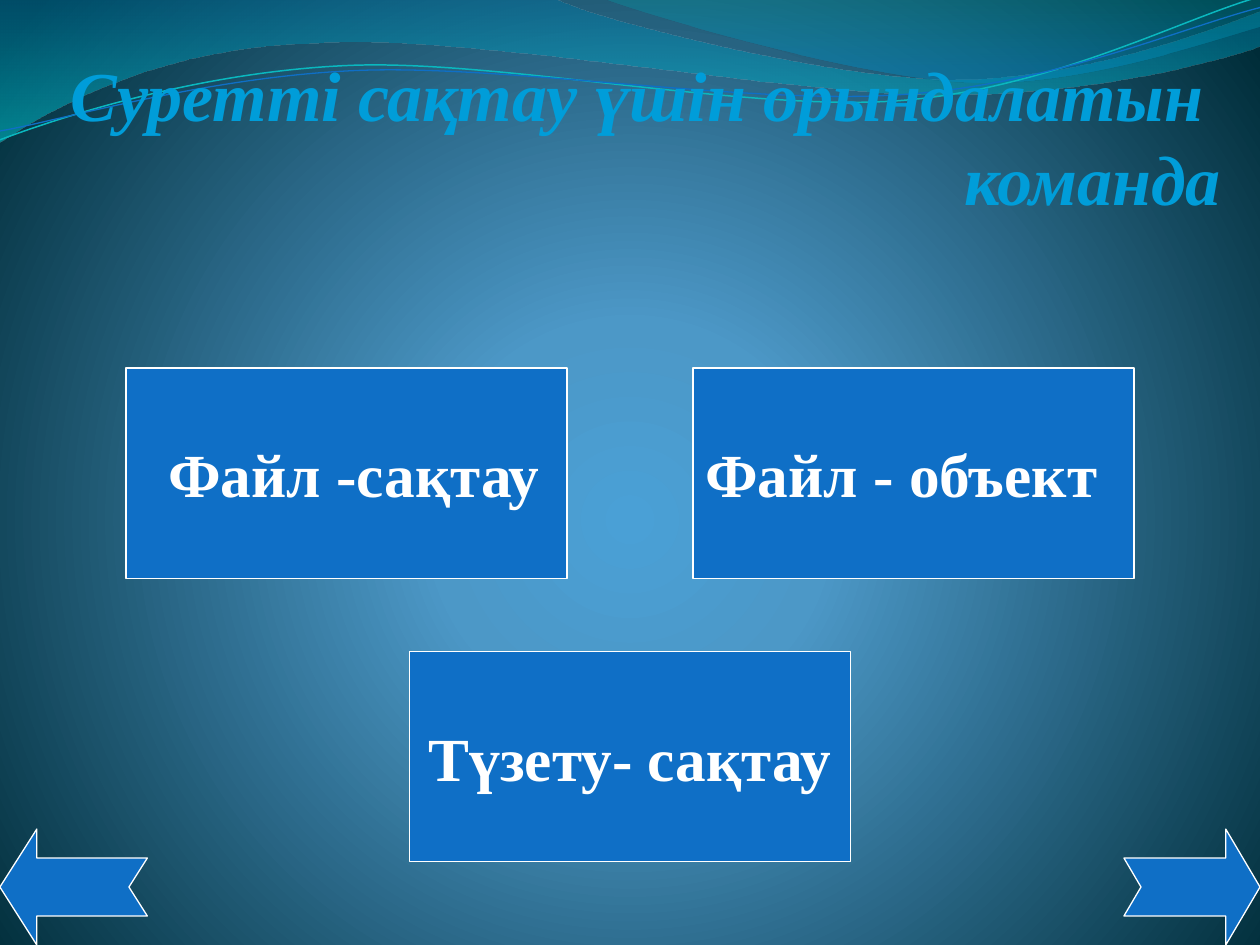
from pptx import Presentation
from pptx.dml.color import RGBColor
from pptx.enum import shapes, text
from pptx.oxml import parse_xml
from pptx.oxml.ns import nsdecls, qn
from pptx.util import Inches, Pt

BLUE = RGBColor(0x0F, 0x6F, 0xC6)
TEAL = RGBColor(0x0A, 0xB8, 0xBF)
SKY = RGBColor(0x00, 0x9D, 0xD9)
WHITE = RGBColor(0xFF, 0xFF, 0xFF)
# Gradient stops: position in percent, colour, opacity in percent
BACKDROP = [(0, RGBColor(0x4A, 0xA0, 0xD6), 100),
            (25, RGBColor(0x4C, 0x98, 0xC7), 100),
            (100, RGBColor(0x00, 0x2C, 0x38), 100)]
WIDE_WAVE = [(0, RGBColor(0x00, 0x74, 0xA1), 45),
             (100, RGBColor(0x00, 0xC6, 0xCF), 55)]
RIGHT_WAVE = [(0, RGBColor(0x00, 0xA1, 0xA9), 30),
              (80, RGBColor(0x00, 0x8B, 0xBF), 45)]
DOWN = '<a:lin ang="5400000" scaled="0"/>'
GLOW = ('<a:path path="circle"><a:fillToRect l="10000" t="110000" '
        'r="10000" b="100000"/></a:path>')
FONT = "Times New Roman"


def set_gradient(fill, props, stops, shade):
    """Replace the fill inside props by a gradient with translucent stops."""
    fill.gradient()
    gs = "".join(
        f'<a:gs pos="{pos * 1000}"><a:srgbClr val="{color}">'
        f'<a:alpha val="{alpha * 1000}"/></a:srgbClr></a:gs>'
        for pos, color, alpha in stops)
    old = props.find(qn("a:gradFill"))
    props.replace(old, parse_xml(
        f'<a:gradFill {nsdecls("a")} rotWithShape="1">'
        f'<a:gsLst>{gs}</a:gsLst>{shade}</a:gradFill>'))


def add_curve(s, start, segments, close):
    """Draw segments of one point (line) or three points (cubic curve)."""
    def emu(point):
        return tuple(Inches(v) for v in point)

    ends = [emu(seg[-1]) for seg in segments]
    fb = s.shapes.build_freeform(*emu(start), scale=1.0)
    fb.add_line_segments(ends, close=close)
    sp = fb.convert_to_shape()
    sp.shadow.inherit = False
    lines = list(sp._element.spPr.iter(qn("a:lnTo")))
    for line, seg in zip(lines, segments):
        if len(seg) == 3:
            pts = "".join(f'<a:pt x="{x - sp.left}" y="{y - sp.top}"/>'
                          for x, y in map(emu, seg))
            line.getparent().replace(line, parse_xml(
                f'<a:cubicBezTo {nsdecls("a")}>{pts}</a:cubicBezTo>'))
    return sp


def add_wave(s, start, segments, stops):
    sp = add_curve(s, start, segments, True)
    set_gradient(sp.fill, sp._element.spPr, stops, DOWN)
    sp.line.fill.background()


def add_wave_line(s, start, segments, color, width):
    sp = add_curve(s, start, segments, False)
    sp.fill.background()
    sp.line.color.rgb = color
    sp.line.width = Pt(width)


def add_blue_shape(s, kind, x, y, w, h):
    sp = s.shapes.add_shape(kind, Inches(x), Inches(y), Inches(w), Inches(h))
    sp.shadow.inherit = False
    sp.fill.solid()
    sp.fill.fore_color.rgb = BLUE
    sp.line.color.rgb = WHITE
    sp.line.width = Pt(0.75)
    return sp


def add_arrow(s, x, w, notch, flip=False):
    sp = add_blue_shape(s, shapes.MSO_SHAPE.NOTCHED_RIGHT_ARROW, x, 6.58, w, 0.92)
    sp.adjustments[0] = 0.5
    sp.adjustments[1] = notch
    if flip:
        sp._element.spPr.find(qn("a:xfrm")).set("flipH", "1")


def add_run(p, words, size, color, italic=False):
    r = p.add_run()
    r.text = words
    r.font.name = FONT
    r.font.size = Pt(size)
    r.font.bold = True
    r.font.italic = italic
    r.font.color.rgb = color


def add_answer(s, x, y, words, align=text.PP_ALIGN.CENTER):
    sp = add_blue_shape(s, shapes.MSO_SHAPE.RECTANGLE, x, y, 3.5, 1.67)
    tf = sp.text_frame
    tf.word_wrap = True
    tf.vertical_anchor = text.MSO_ANCHOR.MIDDLE
    p = tf.paragraphs[0]
    p.alignment = align
    add_run(p, words, 35, WHITE)


def fill_question(sp, words):
    sp.left, sp.top = Inches(0.51), Inches(0.36)
    sp.width, sp.height = Inches(9.25), Inches(6.75)
    tf = sp.text_frame
    tf.word_wrap = True
    tf.vertical_anchor = text.MSO_ANCHOR.TOP
    tf.margin_left, tf.margin_right = 0, Inches(0.07)
    p = tf.paragraphs[0]
    p.alignment = text.PP_ALIGN.RIGHT
    p.space_before = Pt(8.5)
    add_run(p, words, 40, SKY, italic=True)


def main():
    prs = Presentation()
    prs.slide_width, prs.slide_height = Inches(10), Inches(7.5)
    s = prs.slides.add_slide(prs.slide_layouts[0])
    title, question = s.placeholders
    title._element.getparent().remove(title._element)
    fill = s.background.fill
    set_gradient(fill, s._element.cSld.bg.bgPr, BACKDROP, GLOW)

    add_wave(s, (0, 0), [
        [(4.4, -0.01)],
        [(4.76, 0.17), (6.64, 0.63), (7.58, 0.63)],
        [(8.53, 0.63), (9.58, 0.26), (10, 0.09)],
        [(10.01, 0.36)],
        [(9.83, 0.44), (8.7, 0.76), (7.46, 0.75)],
        [(6.22, 0.75), (3.82, 0.28), (2.57, 0.34)],
        [(1.29, 0.36), (0.46, 0.83), (-0.01, 1.13)]], WIDE_WAVE)
    add_wave(s, (4.79, -0.01), [
        [(5.09, 0.11), (6.82, 0.62), (7.69, 0.65)],
        [(8.56, 0.69), (9.61, 0.32), (10, 0.21)],
        [(10, 0)]], RIGHT_WAVE)
    add_wave_line(s, (0, 1.11), [
        [(0.48, 0.93), (1.58, 0.57), (2.77, 0.52)],
        [(3.95, 0.47), (5.93, 0.89), (7.13, 0.8)],
        [(8.33, 0.71), (9.38, 0.15), (9.98, -0.02)]], TEAL, 0.85)
    add_wave_line(s, (0, 1.04), [
        [(0.47, 0.96), (1.64, 0.61), (2.83, 0.56)],
        [(4.03, 0.51), (5.97, 0.84), (7.17, 0.75)],
        [(8.36, 0.67), (9.41, 0.21), (10, 0.06)]], BLUE, 0.75)

    add_arrow(s, 8.92, 1.08, 0.295)
    add_arrow(s, 0, 1.17, 0.318, flip=True)
    fill_question(question, "Суретті сақтау үшін орындалатын  команда")
    s.shapes._spTree.append(question._element)
    add_answer(s, 1, 2.92, " Файл -сақтау")
    add_answer(s, 5.5, 2.92, "Файл - объект", text.PP_ALIGN.LEFT)
    add_answer(s, 3.25, 5.17, "Түзету- сақтау")
    prs.save("out.pptx")


if __name__ == "__main__":
    main()
